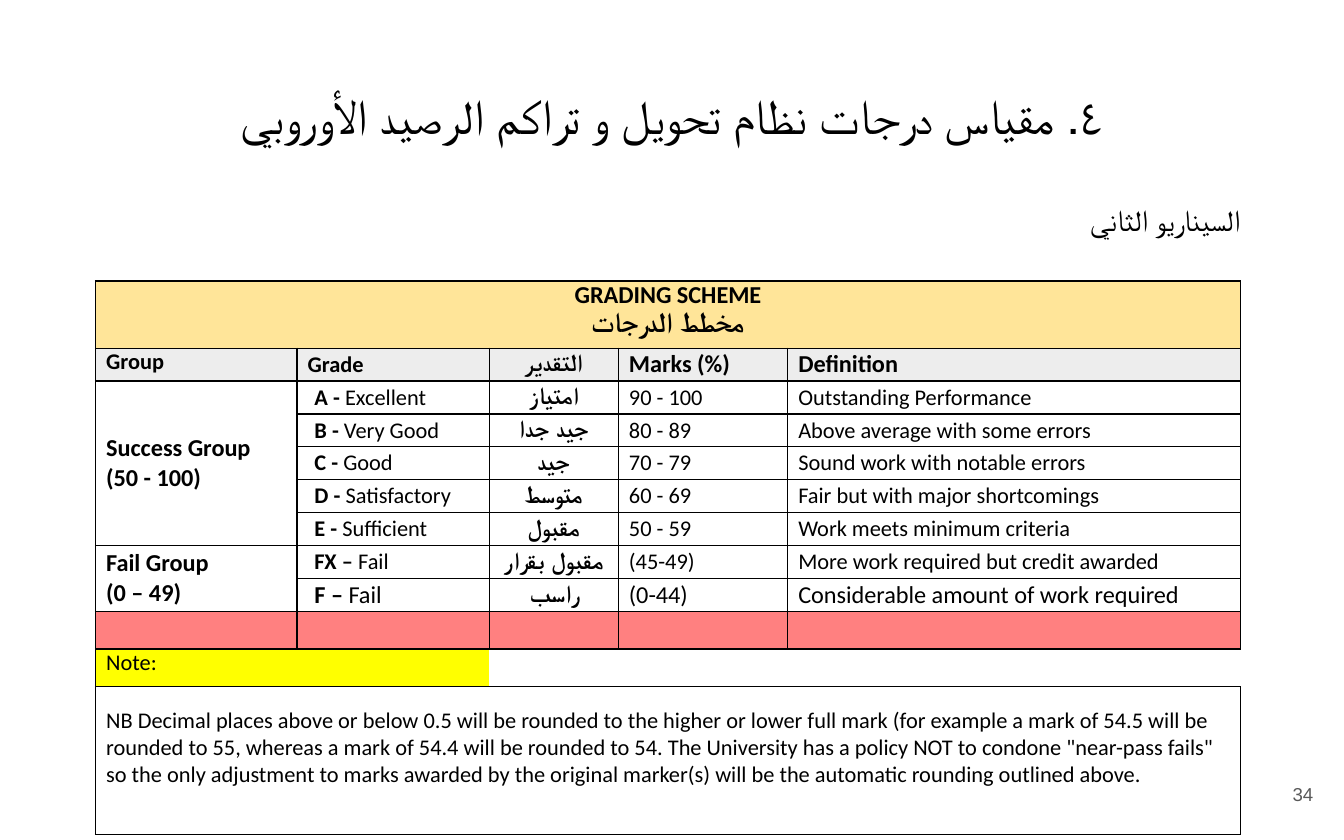
from pptx import Presentation, util as u
from pptx.dml import color
from pptx.enum import text
from pptx.oxml import ns
from lxml import etree

# Content
SLIDE = (10, 6.25)
LABELS = [
    dict(words="٤. مقياس درجات نظام تحويل و تراكم الرصيد الأوروبي",
         at=(0.34, 0.54, 9.32, 0.7), size=26, align="CENTER"),
    dict(words="السيناريو الثاني", at=(7.01, 1.36, 2.32, 0.73), size=16,
         align="RIGHT", rtl=True, spacing=1.15),
    dict(words="34", at=(9.27, 5.67, 0.6, 0.48), size=10, align="RIGHT",
         font="Arial", hue="595959", anchor="MIDDLE"),
]
HEADINGS = [("Group", 12), ("Grade", 12), ("التقدير", 13),
            ("Marks (%)", 13), ("Definition", 13)]
GRADES = [
    ("A - ", "Excellent", "امتياز", "90 - 100", "Outstanding Performance"),
    ("B - ", "Very Good", "جيد جدا", "80 - 89", "Above average with some errors"),
    ("C - ", "Good", "جيد", "70 - 79", "Sound work with notable errors"),
    ("D - ", "Satisfactory", "متوسط", "60 - 69", "Fair but with major shortcomings"),
    ("E - ", "Sufficient", "مقبول", "50 - 59", "Work meets minimum criteria"),
    ("FX – ", "Fail", "مقبول بقرار", "(45-49)", "More work required but credit awarded"),
    ("F – ", "Fail", "راسب", "(0-44)", "Considerable amount of work required"),
]
GROUPS = [("Success Group", "(50 - 100)", 0, 5), ("Fail Group", "(0 – 49)", 5, 2)]
NOTE = ("NB Decimal places above or below 0.5 will be rounded to the higher or lower "
        "full mark (for example a mark of 54.5 will be rounded to 55, whereas a mark of "
        "54.4 will be rounded to 54. The University has a policy NOT to condone "
        "\"near-pass fails\" so the only adjustment to marks awarded by the original "
        "marker(s) will be the automatic rounding outlined above.")

# Grid
LEFT, TOP = 0.71, 2.09
COLUMNS = [1.5, 1.43, 0.96, 1.26, 3.37]
BODY_ROWS = len(GRADES) + 1
ROWS = [0.5] + [1.96 / BODY_ROWS] * BODY_ROWS + [0.28, 0.28, 1.1]
FIRST = 2
SPACER = FIRST + len(GRADES)
REMARK, DETAIL = SPACER + 1, SPACER + 2
LAST = len(COLUMNS) - 1


def rgb(value):
    return color.RGBColor.from_string(value)


def write(para, runs, size, align="LEFT", rtl=False, font="Calibri",
          hue="000000", spacing=None, indent=0):
    para.alignment = getattr(text.PP_ALIGN, align)
    para.line_spacing = spacing
    properties = para._p.get_or_add_pPr()
    if rtl:
        properties.set("rtl", "1")
    if indent:
        properties.set("indent", str(u.Inches(indent)))
    for words, bold in runs:
        span = para.add_run()
        span.text = words
        for name, value in dict(size=u.Pt(size), name=font, bold=bold).items():
            setattr(span.font, name, value)
        span.font.color.rgb = rgb(hue)


def fill_cell(row, column, paragraphs, anchor="MIDDLE"):
    cell = grid.cell(row, column)
    cell.vertical_anchor = getattr(text.MSO_ANCHOR, anchor)
    for index, options in enumerate(paragraphs):
        frame = cell.text_frame
        para = frame.add_paragraph() if index else frame.paragraphs[0]
        write(para, **options)


def draw_edges(cell, widths):
    properties = cell._tc.get_or_add_tcPr()
    for side, width in widths.items():
        line = etree.SubElement(properties, ns.qn("a:ln" + side))
        if not width:
            etree.SubElement(line, ns.qn("a:noFill"))
            continue
        line.set("w", str(u.Pt(width)))
        paint = etree.SubElement(line, ns.qn("a:solidFill"))
        etree.SubElement(paint, ns.qn("a:srgbClr")).set("val", "000000")


deck = Presentation()
deck.slide_width, deck.slide_height = map(u.Inches, SLIDE)
page = deck.slides.add_slide(deck.slide_layouts[6])

# Title, subtitle and page number
for label in LABELS:
    options = dict(label)
    box = page.shapes.add_textbox(*map(u.Inches, options.pop("at")))
    frame = box.text_frame
    frame.word_wrap = True
    frame.vertical_anchor = getattr(text.MSO_ANCHOR, options.pop("anchor", "TOP"))
    for side in ("left", "right", "top", "bottom"):
        setattr(frame, "margin_" + side, u.Inches(0.1))
    write(frame.paragraphs[0], [(options.pop("words"), False)], **options)

# Table frame
holder = page.shapes.add_table(
    len(ROWS), len(COLUMNS),
    *map(u.Inches, (LEFT, TOP, sum(COLUMNS), sum(ROWS))))
grid = holder.table
grid.first_row = grid.horz_banding = False
style = grid._tbl.tblPr.find(ns.qn("a:tableStyleId"))
style.text = "{2D5ABB26-0587-4C30-8999-92F81FD0307C}"
for column, width in zip(grid.columns, COLUMNS):
    column.width = u.Inches(width)
for row, height in zip(grid.rows, ROWS):
    row.height = u.Inches(height)

# Cell borders, margins and fills
FILLS = {0: "FFE599", 1: "EDEDED", SPACER: "FF8080"}
for r in range(len(ROWS)):
    for c in range(len(COLUMNS)):
        cell = grid.cell(r, c)
        edges = dict(L=0.75, R=0.75, T=0.75, B=0.75)
        if r == REMARK:
            edges.update(L=0 if c else 0.75, R=0)
        elif 0 < r < REMARK and c >= LAST - 1:
            edges["R" if c < LAST else "L"] = 0.5
        draw_edges(cell, edges)
        for side, margin in dict(left=0.08, right=0.08, top=0, bottom=0).items():
            setattr(cell, "margin_" + side, u.Inches(margin))
        fill = "FFFF00" if r == REMARK and c < 2 else FILLS.get(r)
        if fill:
            cell.fill.solid()
            cell.fill.fore_color.rgb = rgb(fill)
        else:
            cell.fill.background()
        if r in (SPACER, REMARK):
            end = etree.SubElement(cell.text_frame.paragraphs[0]._p,
                                   ns.qn("a:endParaRPr"))
            end.set("sz", "1200")

# Merged areas: first row, first column, last row, last column
merges = [(0, 0, 0, LAST), (REMARK, 0, REMARK, 1),
          (REMARK, LAST - 1, REMARK, LAST), (DETAIL, 0, DETAIL, LAST)]
merges += [(FIRST + start, 0, FIRST + start + count - 1, 0)
           for _, _, start, count in GROUPS]
for top, left, bottom, right in merges:
    grid.cell(top, left).merge(grid.cell(bottom, right))

# Table text
fill_cell(0, 0, [dict(runs=[("GRADING SCHEME", True)], size=13, align="CENTER"),
                 dict(runs=[("مخطط الدرجات", True)], size=15, align="CENTER",
                      rtl=True)], "TOP")
for c, (words, size) in enumerate(HEADINGS):
    fill_cell(1, c, [dict(runs=[(words, True)], size=size, rtl=c == 2,
                          align="CENTER" if c == 2 else "LEFT")],
              "MIDDLE" if c else "TOP")
for name, marks, start, _ in GROUPS:
    fill_cell(FIRST + start, 0, [dict(runs=[(words, True)], size=13)
                                 for words in (name, marks)])
for r, (letter, grade, arabic, marks, meaning) in enumerate(GRADES, FIRST):
    size = 13 if r == SPACER - 1 else 12
    fill_cell(r, 1, [dict(runs=[(letter, True), (grade, False)], size=size,
                          indent=0.05)])
    fill_cell(r, 2, [dict(runs=[(arabic, True)], size=13, align="CENTER", rtl=True)])
    for c, words in ((3, marks), (4, meaning)):
        fill_cell(r, c, [dict(runs=[(words, False)], size=size)])
for r, words in ((REMARK, "Note:"), (DETAIL, NOTE)):
    fill_cell(r, 0, [dict(runs=[(words, False)], size=12)], "TOP")
grid.cell(DETAIL, 0).margin_top = u.Inches(0.15)

deck.save("out.pptx")
